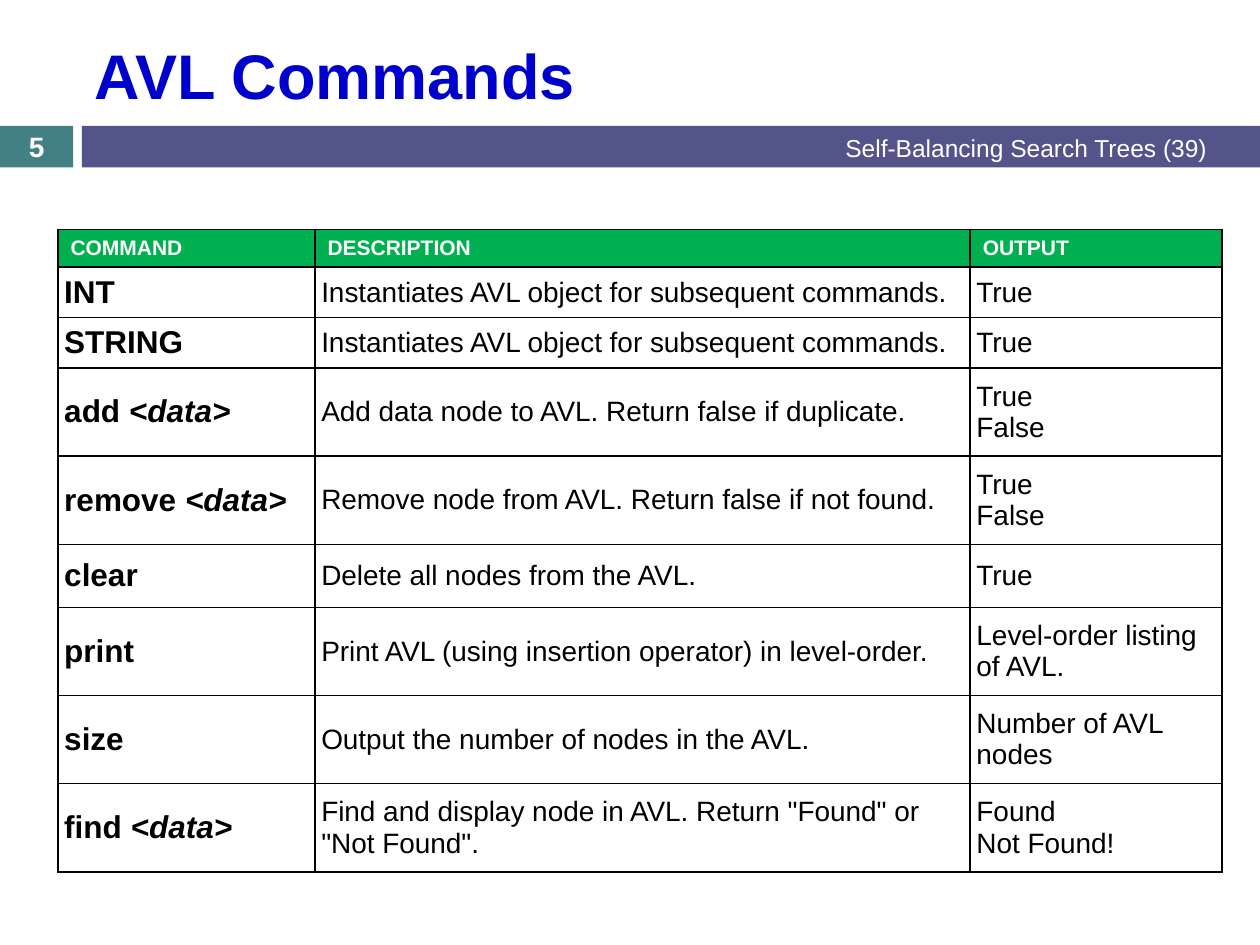
from lxml.etree import SubElement
from pptx import Presentation
from pptx.dml.color import RGBColor as RGB
from pptx.enum.shapes import MSO_SHAPE as Shape
from pptx.enum.text import MSO_ANCHOR as Anchor, PP_ALIGN as Align
from pptx.oxml.ns import qn
from pptx.util import Inches, Pt

HUES = {"title": "0000CC", "page": "438086", "band": "53548A",
        "head": "00B050", "white": "FFFFFF", "black": "000000"}
COLS = (2.04, 5.2, 2)
HEADS = ("COMMAND", "DESCRIPTION", "OUTPUT")
# Row height, command, argument, description, output lines
ROWS = [
    (0.4, "INT", "", "Instantiates AVL object for subsequent commands.", "True"),
    (0.4, "STRING", "", "Instantiates AVL object for subsequent commands.", "True"),
    (0.7, "add ", "<data>", "Add data node to AVL. Return false if duplicate.",
     "True\nFalse"),
    (0.7, "remove ", "<data>", "Remove node from AVL. Return false if not found.",
     "True\nFalse"),
    (0.5, "clear", "", "Delete all nodes from the AVL.", "True"),
    (0.7, "print", "", "Print AVL (using insertion operator) in level-order.",
     "Level-order listing of AVL."),
    (0.7, "size", "", "Output the number of nodes in the AVL.",
     "Number of AVL nodes"),
    (0.7, "find ", "<data>",
     'Find and display node in AVL. Return "Found" or "Not Found".',
     "Found\nNot Found!"),
]


def hue(name):
    return RGB.from_string(HUES[name])


def add_run(para, text, size, color, bold=False, italic=False):
    run = para.add_run()
    run.text = text
    font = run.font
    font.name, font.size = "Arial", Pt(size)
    font.bold, font.italic = bold, italic
    font.color.rgb = hue(color)


def add_text(slide, box, text, size, color, bold=False, align=Align.LEFT):
    frame = slide.shapes.add_textbox(*map(Inches, box)).text_frame
    frame.word_wrap = True
    frame.vertical_anchor = Anchor.MIDDLE
    para = frame.paragraphs[0]
    para.alignment = align
    add_run(para, text, size, color, bold)


def add_bar(slide, box, color):
    bar = slide.shapes.add_shape(Shape.RECTANGLE, *map(Inches, box))
    bar.shadow.inherit = False
    bar.fill.solid()
    bar.fill.fore_color.rgb = hue(color)
    bar.line.fill.background()


def add_band(slide, left, top, width, height):
    """Page number block and the lecture bar beside it."""
    page = (left, top, 0.58, height)
    start = left + 0.65
    add_bar(slide, page, "page")
    add_bar(slide, (start, top, width - 0.65, height), "band")
    add_text(slide, (start + 3.1, top + 0.01, 5.93, height),
             "Self-Balancing Search Trees (39)", 14, "white", align=Align.RIGHT)
    add_text(slide, page, "5", 16, "white", True, Align.CENTER)


def add_edges(cell):
    """Thin black border on all four sides, placed before the cell's fill."""
    props = cell._tc.get_or_add_tcPr()
    for i, side in enumerate(("lnL", "lnR", "lnT", "lnB")):
        line = SubElement(props, qn("a:" + side), w=str(Pt(1)))
        fill = SubElement(line, qn("a:solidFill"))
        SubElement(fill, qn("a:srgbClr"), val=HUES["black"])
        props.insert(i, line)


def add_strip(slide, left, top, height, fill, inset=None):
    """One-row table; returns the first paragraph of each cell."""
    frame = slide.shapes.add_table(1, len(COLS), Inches(left), Inches(top),
                                   Inches(sum(COLS)), Inches(height))
    table = frame.table
    table.first_row = table.horz_banding = False
    table.rows[0].height = Inches(height)
    for col, width in zip(table.columns, COLS):
        col.width = Inches(width)
    for cell in table.rows[0].cells:
        cell.vertical_anchor = Anchor.MIDDLE
        if inset is not None:
            cell.margin_left = cell.margin_right = Inches(inset)
            cell.margin_top = cell.margin_bottom = Inches(inset)
        cell.fill.solid()
        cell.fill.fore_color.rgb = hue(fill)
        add_edges(cell)
    return [cell.text_frame.paragraphs[0] for cell in table.rows[0].cells]


def add_grid(slide, left, top):
    """Header strip with the command strips stacked below it."""
    for para, head in zip(add_strip(slide, left, top, 0.3, "head"), HEADS):
        add_run(para, head, 12, "white", True)
    top += 0.3
    for height, name, arg, about, output in ROWS:
        first, middle, last = add_strip(slide, left, top, height, "white", 0.05)
        add_run(first, name, 18, "black", True)
        if arg:
            add_run(first, arg, 18, "black", True, True)
        add_run(middle, about, 16, "black")
        for i, line in enumerate(output.split("\n")):
            if i:
                last.add_line_break()
            add_run(last, line, 16, "black")
        top += height


def main():
    deck = Presentation()
    deck.slide_width, deck.slide_height = Inches(10), Inches(7.5)
    slide = deck.slides.add_slide(deck.slide_layouts[6])
    add_band(slide, 0, 1, 10, 0.33)
    add_text(slide, (0.65, 0.19, 8.92, 0.8), "AVL Commands", 36, "title", True)
    add_grid(slide, 0.46, 1.82)
    deck.save("out.pptx")


if __name__ == "__main__":
    main()
